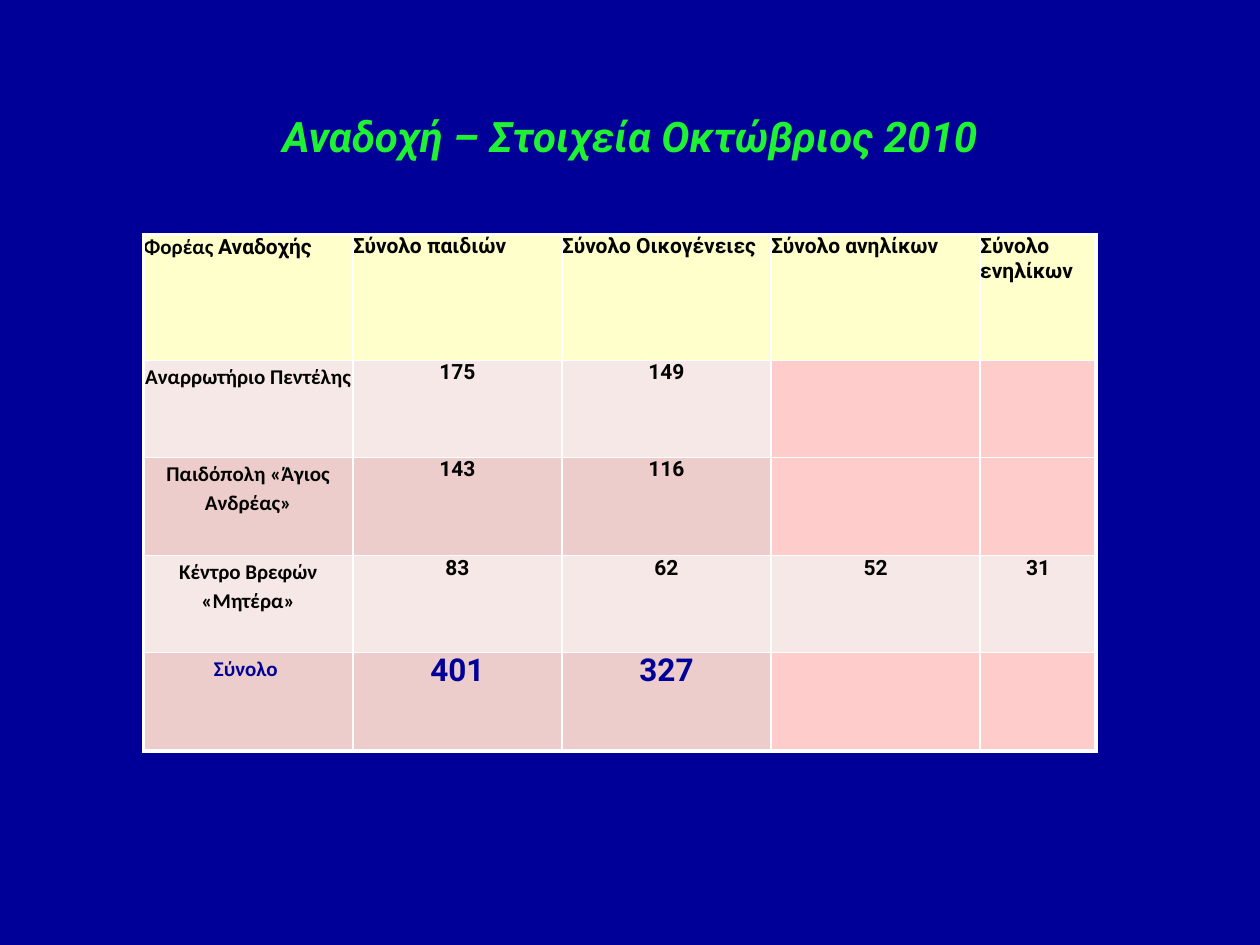
from lxml import etree
from pptx import Presentation
from pptx.dml.color import RGBColor
from pptx.enum import text
from pptx.oxml import ns
from pptx.util import Inches, Pt

HEAD, LIGHT, DARK, BARE = "FFFFCC", "F6E8E7", "ECCDCB", "FFCCCC"
BLACK, BLUE = "030301", "000099"
COLS = [1.66] * 4 + [0.92]
ROWS = [1, 0.77, 0.78, 0.77, 0.78]
TITLES = ["Φορέας Αναδοχής", "Σύνολο παιδιών", "Σύνολο Οικογένειες",
          "Σύνολο ανηλίκων", "Σύνολο ενηλίκων"]
DATA = [
    ["Αναρρωτήριο Πεντέλης", "175", "149", "", ""],
    ["Παιδόπολη «Άγιος Ανδρέας»", "143", "116", "", ""],
    ["Κέντρο Βρεφών «Μητέρα»", "83", "62", "52", "31"],
    ["Σύνολο ", "401", "327", "", ""],
]


def color(code):
    return RGBColor.from_string(code)


def paint(fill, code):
    fill.solid()
    fill.fore_color.rgb = color(code)


def apply(item, form):
    for key, val in form.items():
        setattr(item, key, val)


def write(para, words, tint, **form):
    run = para.add_run()
    run.text = words
    apply(run.font, {"bold": True, "name": "Roboto", "size": Pt(12), **form})
    run.font.color.rgb = color(tint)


def border(cell, row, col):
    outer = {"L": col == 0, "R": col == len(COLS) - 1,
             "T": row == 0, "B": row == len(ROWS) - 1}
    props = cell._tc.get_or_add_tcPr()
    for side, edge in outer.items():
        line = etree.SubElement(props, ns.qn("a:ln" + side),
                                w=str(Pt(2.25 if edge else 1)))
        fill = etree.SubElement(line, ns.qn("a:solidFill"))
        etree.SubElement(fill, ns.qn("a:srgbClr"), val="FFFFFF")


def fill_cell(cell, row, col, words):
    border(cell, row, col)
    band = HEAD if row == 0 else LIGHT if row % 2 else DARK
    paint(cell.fill, band if words else BARE)
    apply(cell, dict.fromkeys(
        ["margin_left", "margin_right", "margin_top", "margin_bottom"], 0))
    if not words:
        return
    para = cell.text_frame.paragraphs[0]
    total = row == len(ROWS) - 1
    tint = BLUE if total else BLACK
    if row:
        para.alignment = text.PP_ALIGN.CENTER
    if row and col == 0:
        para.line_spacing = 1.15
        write(para, words, tint, name="Calibri")
    elif row == col == 0:
        first, last = words.split()
        write(para, first + " ", tint, name="Calibri")
        write(para, last, tint)
    else:
        write(para, words, tint, size=Pt(18 if total else 12))


def add_title(slide):
    box = slide.shapes.add_textbox(Inches(0.5), Inches(0.32), Inches(9), Inches(1.51))
    frame = box.text_frame
    apply(frame, {"word_wrap": True, "vertical_anchor": text.MSO_ANCHOR.MIDDLE})
    para = frame.paragraphs[0]
    para.alignment = text.PP_ALIGN.CENTER
    write(para, "Αναδοχή – Στοιχεία Οκτώβριος 2010", "1FF133",
          size=Pt(24), italic=True)


def add_grid(slide):
    grid = slide.shapes.add_table(
        len(ROWS), len(COLS), Inches(1.14), Inches(1.86),
        Inches(sum(COLS)), Inches(sum(ROWS))).table
    for col, wide in zip(grid.columns, COLS):
        col.width = Inches(wide)
    for row, high in zip(grid.rows, ROWS):
        row.height = Inches(high)
    for row, line in enumerate([TITLES] + DATA):
        for col, words in enumerate(line):
            fill_cell(grid.cell(row, col), row, col, words)


def main():
    deck = Presentation()
    apply(deck, {"slide_width": Inches(10), "slide_height": Inches(7.5)})
    slide = deck.slides.add_slide(deck.slide_layouts[6])
    paint(slide.background.fill, BLUE)
    add_title(slide)
    add_grid(slide)
    deck.save("out.pptx")


if __name__ == "__main__":
    main()
